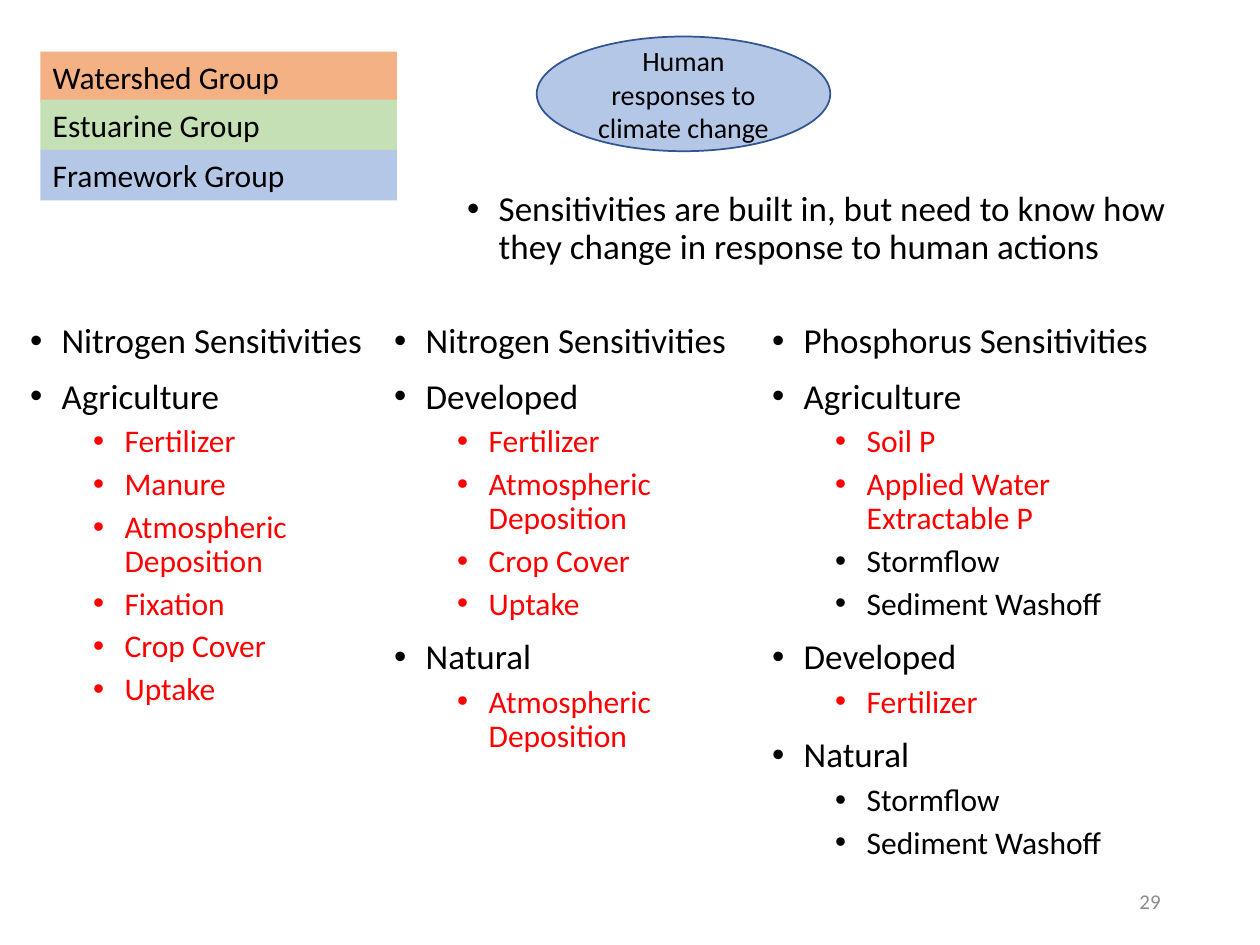
import pptx
import pptx.util
import pptx.dml.color
import pptx.enum.shapes
import pptx.enum.text
import lxml.etree

Inches = pptx.util.Inches
Pt = pptx.util.Pt
Align = pptx.enum.text.PP_ALIGN
Anchor = pptx.enum.text.MSO_ANCHOR
Kind = pptx.enum.shapes.MSO_SHAPE


def tint(hue):
    return pptx.dml.color.RGBColor.from_string(hue)


def style(para, size, hue="000000", align=Align.LEFT):
    para.alignment = align
    for run in para.runs:
        run.font.name = "Calibri"
        run.font.size = Pt(size)
        run.font.color.rgb = tint(hue)


deck = pptx.Presentation()
deck.slide_width = Inches(10)
deck.slide_height = Inches(7.5)
slide = deck.slides.add_slide(deck.slide_layouts[6])
shapes = slide.shapes

groups = [
    ("Watershed Group", 0.41, "F4B183"),
    ("Estuarine Group", 0.79, "C5E0B4"),
    ("Framework Group", 1.19, "B4C7E7"),
]
for text, top, hue in groups:
    box = shapes.add_textbox(Inches(0.32), Inches(top), Inches(2.83), Inches(0.4))
    box.fill.solid()
    box.fill.fore_color.rgb = tint(hue)
    frame = box.text_frame
    frame.word_wrap = True
    frame.auto_size = pptx.enum.text.MSO_AUTO_SIZE.SHAPE_TO_FIT_TEXT
    frame.text = text
    style(frame.paragraphs[0], 18)

oval = shapes.add_shape(Kind.OVAL, Inches(4.26), Inches(0.29), Inches(2.33), Inches(0.91))
oval.shadow.inherit = False
oval.fill.solid()
oval.fill.fore_color.rgb = tint("B4C7E7")
oval.line.color.rgb = tint("325491")
oval.line.width = Pt(1)
frame = oval.text_frame
frame.word_wrap = True
frame.vertical_anchor = Anchor.MIDDLE
frame.text = "Human responses to climate change"
style(frame.paragraphs[0], 16, align=Align.CENTER)

red, black = "FF0000", "000000"
lists = [
    (3.61, 1.47, 5.97, 0.8, [
        ("Sensitivities are built in, but need to know how they change in response to human actions", []),
    ]),
    (0.14, 2.52, 3.01, 4.75, [
        ("Nitrogen Sensitivities", []),
        ("Agriculture", [
            ("Fertilizer", red), ("Manure", red), ("Atmospheric Deposition", red),
            ("Fixation", red), ("Crop Cover", red), ("Uptake", red),
        ]),
    ]),
    (3.03, 2.52, 3.01, 4.75, [
        ("Nitrogen Sensitivities", []),
        ("Developed", [
            ("Fertilizer", red), ("Atmospheric Deposition", red),
            ("Crop Cover", red), ("Uptake", red),
        ]),
        ("Natural", [("Atmospheric Deposition", red)]),
    ]),
    (6.03, 2.52, 3.59, 4.75, [
        ("Phosphorus Sensitivities", []),
        ("Agriculture", [
            ("Soil P", red), ("Applied Water Extractable P", red),
            ("Stormflow", black), ("Sediment Washoff", black),
        ]),
        ("Developed", [("Fertilizer", red)]),
        ("Natural", [("Stormflow", black), ("Sediment Washoff", black)]),
    ]),
]
for left, top, width, height, heads in lists:
    box = shapes.add_textbox(Inches(left), Inches(top), Inches(width), Inches(height))
    frame = box.text_frame
    frame.word_wrap = True
    rows = []
    for head, items in heads:
        rows.append((head, 0, black))
        rows += [(item, 1, hue) for item, hue in items]
    frame.text = "\n".join(row[0] for row in rows)
    for para, (text, level, hue) in zip(frame.paragraphs, rows):
        style(para, 18 if level else 20, hue)
        para.level = level
        para.line_spacing = 0.9
        para.space_before = Pt(5 if level else 10)
        props = para._p.get_or_add_pPr()
        props.set("marL", str(Inches(0.75 if level else 0.25)))
        props.set("indent", str(Inches(-0.25)))
        space = "{" + props.nsmap["a"] + "}"
        lxml.etree.SubElement(props, space + "buFont", typeface="Arial")
        lxml.etree.SubElement(props, space + "buChar", char="•")

box = shapes.add_textbox(Inches(7.06), Inches(6.95), Inches(2.25), Inches(0.4))
frame = box.text_frame
frame.word_wrap = True
frame.vertical_anchor = Anchor.MIDDLE
frame.text = "29"
style(frame.paragraphs[0], 12, "8C8C8C", Align.RIGHT)

deck.save("out.pptx")
